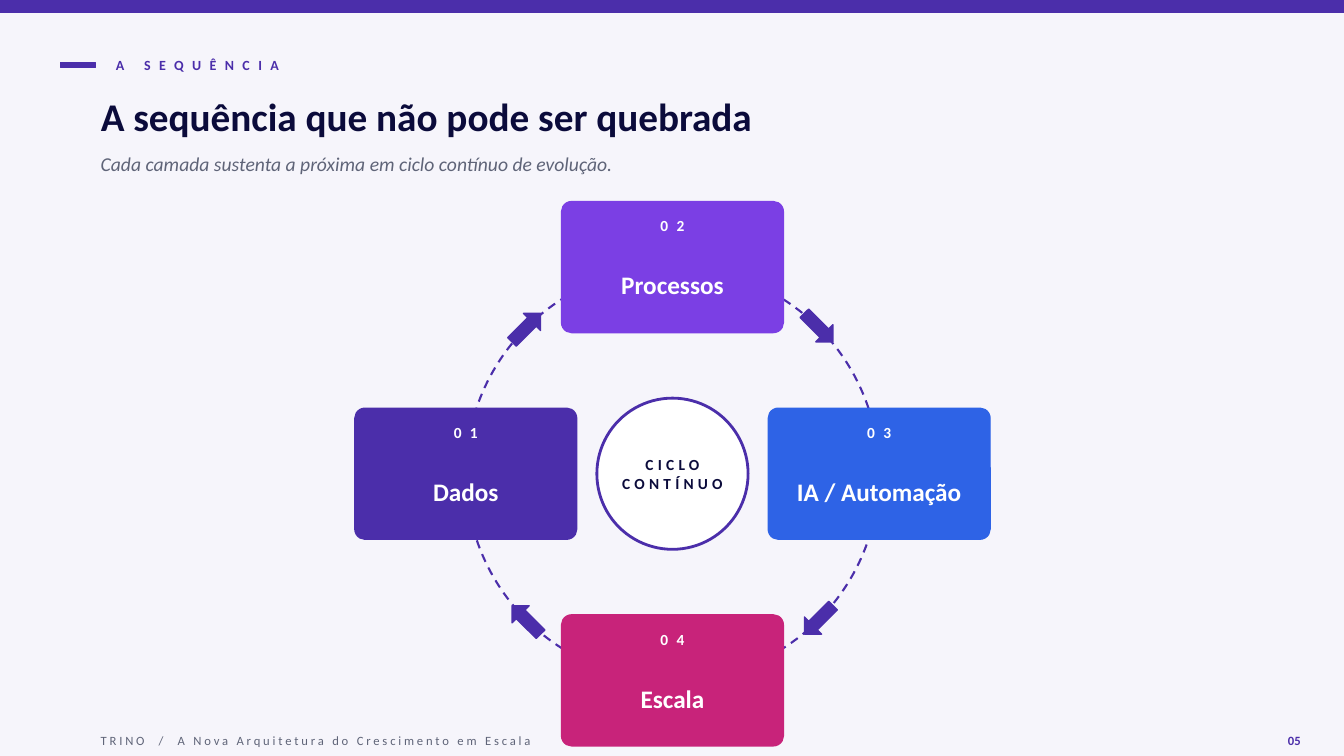
from pptx import Presentation
from pptx.dml.color import RGBColor as RGB
from pptx.enum.dml import MSO_LINE as Dash
from pptx.enum.shapes import MSO_SHAPE as Kind
from pptx.enum.text import MSO_ANCHOR as Anchor, MSO_AUTO_SIZE as Fit, PP_ALIGN as Align
from pptx.util import Inches, Pt

PAPER = RGB(0xF6, 0xF5, 0xFB)
INDIGO = RGB(0x4B, 0x2E, 0xAA)
VIOLET = RGB(0x7B, 0x3F, 0xE4)
BLUE = RGB(0x2E, 0x63, 0xE6)
PINK = RGB(0xC8, 0x23, 0x7A)
NAVY = RGB(0x0B, 0x0B, 0x3B)
GREY = RGB(0x5F, 0x64, 0x78)
WHITE = RGB(0xFF, 0xFF, 0xFF)

MID_X, MID_Y = 6.67, 4.7
CARD_W, CARD_H = 2.2, 1.3
CARD_GAP, ARROW_GAP = 2.05, 1.45

STEPS = [
    ("Dados", INDIGO, -1, 0),
    ("Processos", VIOLET, 0, -1),
    ("IA / Automação", BLUE, 1, 0),
    ("Escala", PINK, 0, 1),
]


def place(item, x, y, w, h):
    """Move and size an item, in inches."""
    item.left, item.top = Inches(x), Inches(y)
    item.width, item.height = Inches(w), Inches(h)


def write(slide, text, x, y, w, h, size=11, color=WHITE, bold=False,
          italic=False, gap=0, align=Align.LEFT, box=None):
    """Write text in a new box or in the given placeholder."""
    box = box or slide.shapes.add_textbox(0, 0, 0, 0)
    place(box, x, y, w, h)
    frame = box.text_frame
    frame.word_wrap = True
    frame.auto_size = Fit.NONE
    frame.vertical_anchor = Anchor.MIDDLE
    frame.text = text
    for para in frame.paragraphs:
        para.alignment = align
        for run in para.runs:
            font = run.font
            font.name, font.size = "Calibri", Pt(size)
            font.bold, font.italic = bold, italic
            font.color.rgb = color
            if gap:
                run._r.get_or_add_rPr().set("spc", str(gap * 100))


def draw(slide, kind, x, y, w, h, fill=INDIGO, line=INDIGO, width=1):
    """Draw a preset shape with a flat fill and a line."""
    shape = slide.shapes.add_shape(
        kind, Inches(x), Inches(y), Inches(w), Inches(h))
    shape.shadow.inherit = False
    if fill is None:
        shape.fill.background()
    else:
        shape.fill.solid()
        shape.fill.fore_color.rgb = fill
    shape.line.color.rgb = line
    shape.line.width = Pt(width)
    return shape


def disc(slide, size, **style):
    """Draw a circle around the middle of the cycle."""
    return draw(slide, Kind.OVAL, MID_X - size / 2, MID_Y - size / 2,
                size, size, **style)


def arrow(slide, dx, dy, turn):
    """Draw a turned arrow on the ring."""
    w, h = 0.4, 0.24
    x, y = MID_X + dx * ARROW_GAP, MID_Y + dy * ARROW_GAP
    shape = draw(slide, Kind.RIGHT_ARROW, x - w / 2, y - h / 2, w, h)
    shape.rotation = turn


def card(slide, num, name, color, dx, dy):
    """Draw a numbered card of the cycle."""
    x = MID_X + dx * CARD_GAP - CARD_W / 2
    y = MID_Y + dy * CARD_GAP - CARD_H / 2
    shape = draw(slide, Kind.ROUNDED_RECTANGLE, x, y, CARD_W, CARD_H,
                 fill=color, line=color)
    shape.adjustments[0] = 0.077
    write(slide, f"{num:02}", x, y + 0.1, CARD_W, 0.28, bold=True, gap=6,
          align=Align.CENTER)
    write(slide, name, x, y + 0.4, CARD_W, 0.85, size=18, bold=True,
          align=Align.CENTER)


def header(slide):
    """Add the top bar, the label, the title and the lead."""
    draw(slide, Kind.RECTANGLE, 0, 0, 13.33, 0.12)
    draw(slide, Kind.RECTANGLE, 0.6, 0.62, 0.35, 0.05)
    write(slide, "A SEQUÊNCIA", 1.05, 0.47, 8, 0.35, size=10, color=INDIGO,
          bold=True, gap=6)
    write(slide, "A sequência que não pode ser quebrada", 0.9, 0.85, 12, 0.6,
          size=28, color=NAVY, bold=True, box=slide.shapes.title)
    write(slide, "Cada camada sustenta a próxima em ciclo contínuo de evolução.",
          0.9, 1.45, 12, 0.35, size=14, color=GREY, italic=True)


def cycle(slide):
    """Add the ring, its hub, the arrows and the cards."""
    disc(slide, 4.1, fill=None, width=1.5).line.dash_style = Dash.DASH
    disc(slide, 1.5, fill=WHITE, width=2)
    write(slide, "CICLO\nCONTÍNUO", MID_X - 0.75, MID_Y - 0.45, 1.5, 0.9,
          color=NAVY, bold=True, gap=3, align=Align.CENTER)
    for i, (_, _, dx, dy) in enumerate(STEPS):
        _, _, next_x, next_y = STEPS[(i + 1) % len(STEPS)]
        arrow(slide, dx + next_x, dy + next_y, (315 + 90 * i) % 360)
    for num, step in enumerate(STEPS, 1):
        card(slide, num, *step)


def footer(slide):
    """Add the deck name and the page number."""
    write(slide, "TRINO  /  A Nova Arquitetura do Crescimento em Escala",
          0.9, 7.25, 8, 0.2, size=9, color=GREY, gap=2)
    write(slide, "05", 11.8, 7.25, 1.2, 0.2, size=9, color=INDIGO, bold=True,
          align=Align.RIGHT)


def main():
    """Build and save the slide."""
    deck = Presentation()
    deck.slide_width, deck.slide_height = Inches(13.33), Inches(7.5)
    slide = deck.slides.add_slide(deck.slide_layouts[5])
    slide.background.fill.solid()
    slide.background.fill.fore_color.rgb = PAPER
    header(slide)
    cycle(slide)
    footer(slide)
    deck.save("out.pptx")


if __name__ == "__main__":
    main()
